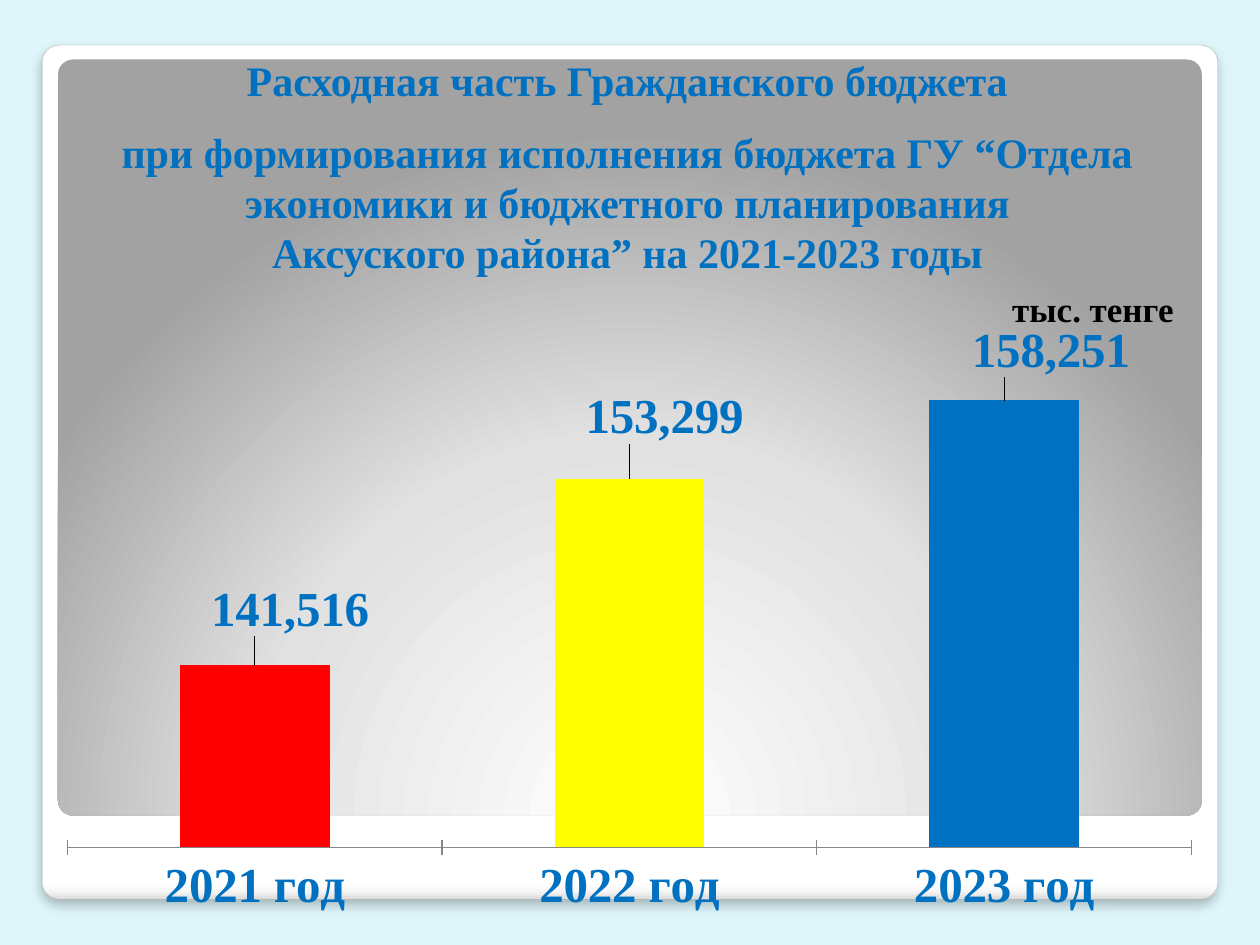
from lxml import etree
from pptx import Presentation
from pptx.chart.data import CategoryChartData
from pptx.dml.color import RGBColor
from pptx.enum.chart import XL_CHART_TYPE, XL_LABEL_POSITION, XL_TICK_MARK
from pptx.enum.shapes import MSO_SHAPE
from pptx.enum.text import MSO_ANCHOR, MSO_AUTO_SIZE, PP_ALIGN
from pptx.oxml import parse_xml
from pptx.oxml.ns import nsdecls, qn
from pptx.util import Cm, Pt

COLUMN = XL_CHART_TYPE.COLUMN_CLUSTERED
OUTSIDE = XL_LABEL_POSITION.OUTSIDE_END
CROSS, NO_TICK = XL_TICK_MARK.CROSS, XL_TICK_MARK.NONE
ROUND = MSO_SHAPE.ROUNDED_RECTANGLE
MIDDLE, CENTER = MSO_ANCHOR.MIDDLE, PP_ALIGN.CENTER

HEX = {"page": "DEF5FA", "blue": "0070C0", "black": "000000",
       "red": "FF0000", "yellow": "FFFF00", "series": "1FAECD",
       "edge": "A4A4A4", "axis": "868686"}
FONT = "Times New Roman"
FRAME = [(0, "FFFFFF"), (98, "FFFFFF"), (99, "F7F7F7"), (100, "DADADA")]
GLOW = [(0, "FFFFFF"), (55, "E1E1E1"), (100, "A2A2A2")]
DOWN = '<a:lin {} ang="5400000" scaled="0"/>'
CIRCLE = ('<a:path {} path="circle"><a:fillToRect l="50000" t="175000" '
          'r="50000" b="-75000"/></a:path>')
SHADE = ('<a:outerShdw {} blurRad="76200" dist="50800" dir="5400000" algn="tl" '
         'rotWithShape="0"><a:srgbClr val="000000"><a:alpha val="25000"/>'
         '</a:srgbClr></a:outerShdw>')
# Year, value, bar colour, label shift right and down as parts of the chart
BARS = [("2021 год", 141516, "red", 0.03, -0.04),
        ("2022 год", 153299, "yellow", 0.03, -0.05),
        ("2023 год", 158251, "blue", 0.04, -0.03)]


def rgb(name):
    return RGBColor.from_string(HEX[name])


def style(font, size, color):
    look = {"name": FONT, "size": Pt(size), "bold": True}
    for key, value in look.items():
        setattr(font, key, value)
    font.color.rgb = rgb(color)


def a_xml(text):
    return parse_xml(text.format(nsdecls("a")))


def add_panel(slide, box, stops, way):
    """Add a rounded panel with a gradient of many stops."""
    panel = slide.shapes.add_shape(ROUND, *map(Cm, box))
    panel.adjustments[0] = 0.02
    panel.shadow.inherit = False
    panel.fill.gradient()
    panel.line.fill.background()
    grad = panel.element.spPr.find(qn("a:gradFill"))
    for child in list(grad):
        grad.remove(child)
    rows = "".join(f'<a:gs pos="{at * 1000}"><a:srgbClr val="{tint}"/></a:gs>'
                   for at, tint in stops)
    grad.append(a_xml("<a:gsLst {}>" + rows + "</a:gsLst>"))
    grad.append(a_xml(way))
    return panel


def add_back(slide, box):
    left, top, width, height = box
    frame = add_panel(slide, box, FRAME, DOWN)
    frame.line.color.rgb = rgb("edge")
    frame.line.width = Pt(0.16)
    frame.element.spPr.find(qn("a:effectLst")).append(a_xml(SHADE))
    inner = (left + 0.32, top + 0.29, width - 0.64, height - 1.98)
    add_panel(slide, inner, GLOW, CIRCLE)


def set_layout(parent, index, **parts):
    """Place a chart part by hand, in parts of the chart's size."""
    layout = etree.Element(qn("c:layout"))
    manual = etree.SubElement(layout, qn("c:manualLayout"))
    for key, value in parts.items():
        etree.SubElement(manual, qn(f"c:{key}")).set("val", str(value))
    for old in parent.findall(qn("c:layout")):
        parent.remove(old)
    parent.insert(index, layout)


def add_bars(slide, box):
    data = CategoryChartData(number_format="#,##0")
    data.categories = [bar[0] for bar in BARS]
    data.add_series("Series 1", [bar[1] for bar in BARS])
    chart = slide.shapes.add_chart(COLUMN, *map(Cm, box), data).chart
    style(chart.font, 28, "blue")
    chart.has_legend = chart.has_title = False

    scale = chart.value_axis
    look = {"minimum_scale": 130000, "maximum_scale": 160000,
            "has_major_gridlines": False, "visible": False}
    for key, value in look.items():
        setattr(scale, key, value)
    years = chart.category_axis
    years.major_tick_mark, years.minor_tick_mark = CROSS, NO_TICK
    years.format.line.color.rgb = rgb("axis")

    plot = chart.plots[0]
    plot.gap_width, plot.vary_by_categories = 150, False
    series = plot.series[0]
    series.format.fill.solid()
    series.format.fill.fore_color.rgb = rgb("series")
    labels = series.data_labels
    look = {"show_value": True, "number_format": "#,##0",
            "number_format_is_linked": False, "position": OUTSIDE}
    for key, value in look.items():
        setattr(labels, key, value)
    for i, (_, _, color, right, down) in enumerate(BARS):
        point = series.points[i]
        point.format.fill.solid()
        point.format.fill.fore_color.rgb = rgb(color)
        point.data_label.position = OUTSIDE
    for label, bar in zip(labels._element.findall(qn("c:dLbl")), BARS):
        set_layout(label, 1, x=bar[3], y=bar[4])
    area = chart._chartSpace.chart.plotArea
    set_layout(area, 0, layoutTarget="inner", xMode="edge", yMode="edge",
               x=0.02, y=0.08, w=0.96, h=0.8)


def fill_text(shape, box, lines, size, color):
    for key, value in zip(("left", "top", "width", "height"), box):
        setattr(shape, key, Cm(value))
    frame = shape.text_frame
    look = {"word_wrap": True, "auto_size": MSO_AUTO_SIZE.NONE,
            "vertical_anchor": MIDDLE, "text": "\n".join(lines)}
    for key, value in look.items():
        setattr(frame, key, value)
    for i, para in enumerate(frame.paragraphs):
        para.alignment = CENTER
        para.space_before = Pt(size / 2 if i else 0)
        for run in para.runs:
            style(run.font, size, color)


def add_title(slide, box):
    title = slide.shapes.title
    slide.shapes._spTree.append(title.element)
    fill_text(title, box, [
        "Расходная часть Гражданского бюджета",
        "при формирования исполнения бюджета ГУ “Отдела "
        "экономики и бюджетного планирования\v"
        "Аксуского района” на 2021-2023 годы"], 24, "blue")


def add_unit(slide, box):
    note = slide.shapes.add_textbox(*map(Cm, box))
    fill_text(note, box, ["тыс. тенге"], 20, "black")


def main():
    deck = Presentation()
    deck.slide_width, deck.slide_height = Cm(25.4), Cm(19.05)
    slide = deck.slides.add_slide(deck.slide_layouts[5])
    slide.background.fill.solid()
    slide.background.fill.fore_color.rgb = rgb("page")
    add_back(slide, (0.85, 0.91, 23.7, 17.22))
    add_bars(slide, (0.89, 6.53, 23.6, 11.99))
    add_title(slide, (1.09, 0.74, 23.11, 5.21))
    add_unit(slide, (20.04, 5.72, 3.99, 0.99))
    deck.save("out.pptx")


if __name__ == "__main__":
    main()
